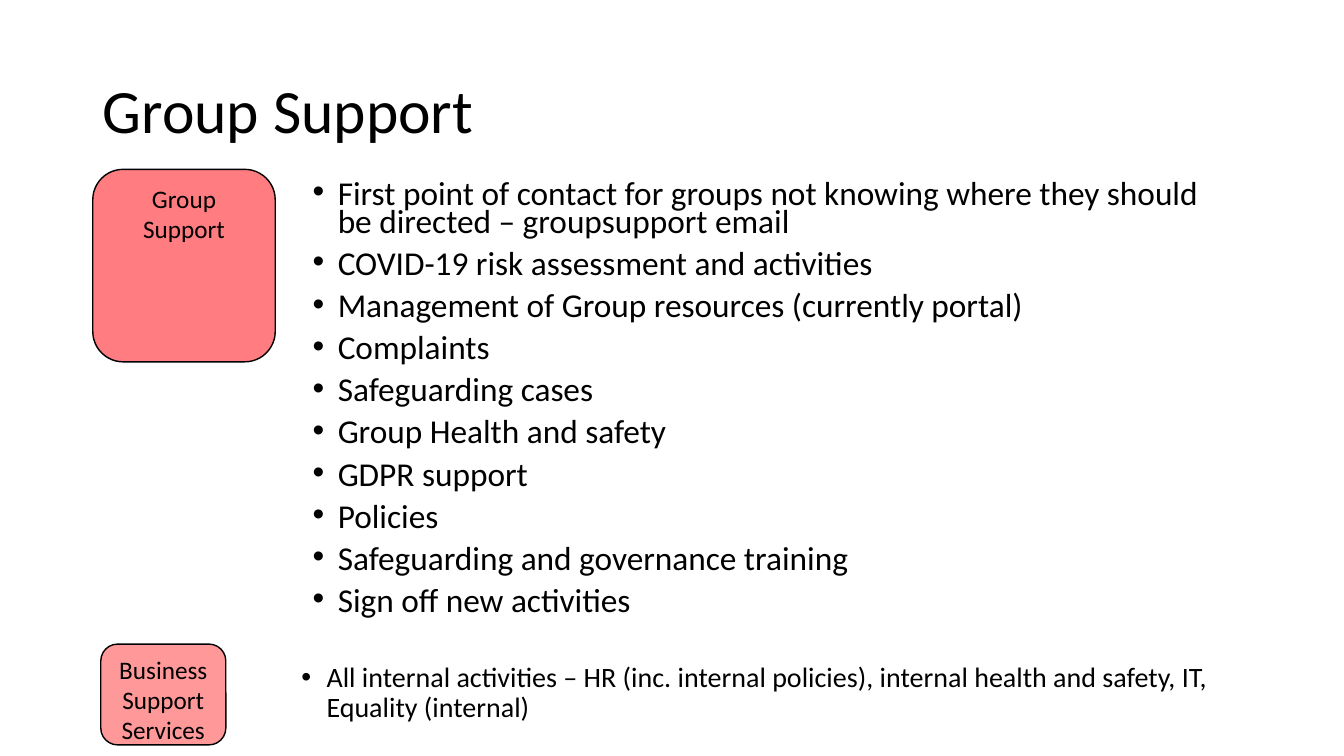
from pptx import Presentation
from pptx.dml.color import RGBColor
from pptx.enum import shapes, text
from pptx.oxml import parse_xml
from pptx.oxml.ns import nsdecls
from pptx.util import Inches, Pt

BLACK = RGBColor(0, 0, 0)
CORAL = RGBColor(0xFF, 0x7C, 0x80)
PINK = RGBColor(0xFF, 0x99, 0x99)

TITLE = "Group Support"
DUTIES = [
    "First point of contact for groups not knowing where they should be directed – groupsupport email",
    "COVID-19 risk assessment and activities",
    "Management of Group resources (currently portal)",
    "Complaints",
    "Safeguarding cases",
    "Group Health and safety",
    "GDPR support",
    "Policies",
    "Safeguarding and governance training",
    "Sign off new activities",
]
INTERNAL = [
    "All internal activities – HR (inc. internal policies), internal health and safety, IT, Equality (internal)",
]
TEAMS = [
    ("Group Support", CORAL, (0.92, 1.68, 1.81, 1.91)),
    ("Business Support Services", PINK, (1, 6.39, 1.24, 1)),
]


def place(shape, *box):
    shape.left, shape.top, shape.width, shape.height = map(Inches, box)


def add_run(para, words, size):
    run = para.add_run()
    run.text = words
    run.font.name = "Calibri"
    run.font.size = Pt(size)
    run.font.color.rgb = BLACK


def setup(frame, anchor=text.MSO_ANCHOR.TOP):
    frame.word_wrap = True
    frame.auto_size = text.MSO_AUTO_SIZE.NONE
    frame.vertical_anchor = anchor


def add_list(frame, items, size, spacing):
    setup(frame)
    for i, item in enumerate(items):
        para = frame.add_paragraph() if i else frame.paragraphs[0]
        para.alignment = text.PP_ALIGN.LEFT
        para.line_spacing = spacing
        para.space_before = Pt(10)
        props = para._p.get_or_add_pPr()
        props.set("marL", str(Inches(0.25)))
        props.set("indent", str(-Inches(0.25)))
        props.append(parse_xml(f'<a:buFont {nsdecls("a")} typeface="Arial"/>'))
        props.append(parse_xml(f'<a:buChar {nsdecls("a")} char="•"/>'))
        add_run(para, item, size)


def add_team(slide, name, fill, box):
    shape = slide.shapes.add_shape(
        shapes.MSO_SHAPE.ROUNDED_RECTANGLE, *map(Inches, box))
    shape.shadow.inherit = False
    shape.fill.solid()
    shape.fill.fore_color.rgb = fill
    shape.line.color.rgb = BLACK
    shape.line.width = Pt(1)
    setup(shape.text_frame)
    para = shape.text_frame.paragraphs[0]
    para.alignment = text.PP_ALIGN.CENTER
    add_run(para, name, 18)


def main():
    deck = Presentation()
    deck.slide_width, deck.slide_height = Inches(13.33), Inches(7.5)
    slide = deck.slides.add_slide(deck.slide_layouts[1])

    title, body = slide.placeholders
    place(title, 0.92, 0.4, 11.5, 1.45)
    setup(title.text_frame, text.MSO_ANCHOR.MIDDLE)
    head = title.text_frame.paragraphs[0]
    head.alignment = text.PP_ALIGN.LEFT
    head.line_spacing = 0.9
    add_run(head, TITLE, 44)

    place(body, 3, 1.77, 9.32, 4.82)
    add_list(body.text_frame, DUTIES, 23.8, 0.7)

    for team in TEAMS:
        add_team(slide, *team)

    note = slide.shapes.add_textbox(*map(Inches, (2.89, 6.53, 9.32, 0.86)))
    add_list(note.text_frame, INTERNAL, 20, 0.9)

    deck.save("out.pptx")


if __name__ == "__main__":
    main()
